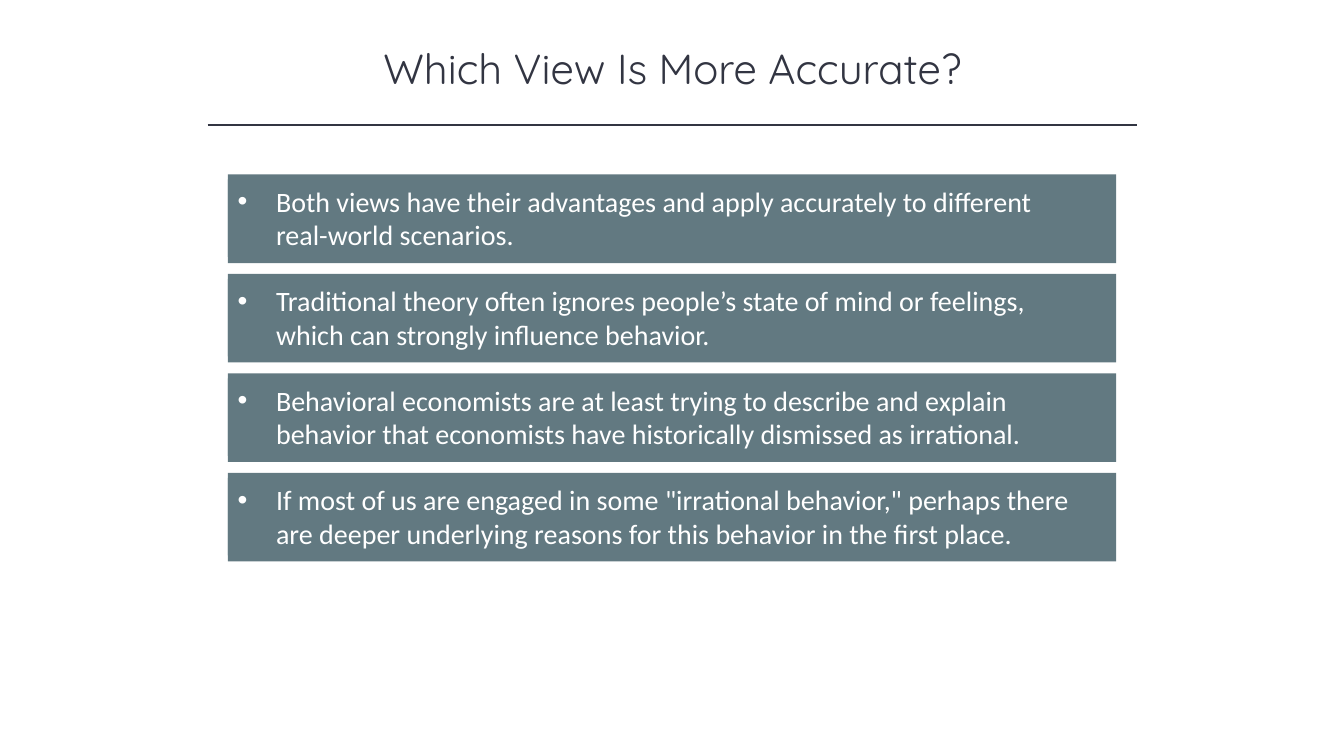
import dataclasses

import lxml.etree
import pptx
import pptx.dml.color
import pptx.enum.shapes
import pptx.enum.text
import pptx.oxml.ns
import pptx.util
from pptx.util import Inches

COLOURS = {"ink": "323542", "bar": "627981", "bar_text": "FFFFFF"}
FIRST_TOP, LAST_TOP = 1.73, 4.69
BAR_LEFT = 2.26


@dataclasses.dataclass(frozen=True)
class Bar:
    """One statement and its distance from the top of the page."""
    text: str
    top: float


STATEMENTS = (
    "Both views have their advantages and apply accurately to different real-world scenarios.",
    "Traditional theory often ignores people’s state of mind or feelings, "
    "which can strongly influence behavior.",
    "Behavioral economists are at least trying to describe and explain behavior "
    "that economists have historically dismissed as irrational.",
    "If most of us are engaged in some \"irrational behavior,\" perhaps there are "
    "deeper underlying reasons for this behavior in the first place.",
)
PITCH = (LAST_TOP - FIRST_TOP) / (len(STATEMENTS) - 1)
BARS = [Bar(text, FIRST_TOP + PITCH * row) for row, text in enumerate(STATEMENTS)]


def colour(name: str) -> pptx.dml.color.RGBColor:
    """Return a named colour."""
    return pptx.dml.color.RGBColor.from_string(COLOURS[name])


def add_span(para, text: str, font: str, size: int, ink: str) -> None:
    """Add one formatted run to a paragraph."""
    span = para.add_run()
    span.text = text
    span.font.name = font
    span.font.size = pptx.util.Pt(size)
    span.font.color.rgb = colour(ink)


def add_bullet(para) -> None:
    """Give a paragraph a round bullet with a hanging indent."""
    properties = para._p.get_or_add_pPr()
    properties.set("marL", str(Inches(0.38)))
    properties.set("indent", str(Inches(-0.38)))
    font = lxml.etree.SubElement(properties, pptx.oxml.ns.qn("a:buFont"))
    font.set("typeface", "Arial")
    bullet = lxml.etree.SubElement(properties, pptx.oxml.ns.qn("a:buChar"))
    bullet.set("char", "•")


def add_panel(group, top: float, width: float, height: float):
    """Add a plain filled rectangle to a group."""
    panel = group.shapes.add_shape(
        pptx.enum.shapes.MSO_SHAPE.RECTANGLE,
        Inches(BAR_LEFT), Inches(top), Inches(width), Inches(height))
    panel.shadow.inherit = False
    panel.fill.solid()
    panel.fill.fore_color.rgb = colour("bar")
    panel.line.fill.background()
    return panel


def add_bar(page, bar: Bar) -> None:
    """Add a bar with its bulleted statement."""
    group = page.shapes.add_group_shape()
    add_panel(group, bar.top, 8.81, 0.88)
    box = add_panel(group, bar.top + 0.05, 8.54, 0.77)
    frame = box.text_frame
    frame.word_wrap = True
    frame.auto_size = pptx.enum.text.MSO_AUTO_SIZE.SHAPE_TO_FIT_TEXT
    frame.vertical_anchor = pptx.enum.text.MSO_ANCHOR.TOP
    para = frame.paragraphs[0]
    para.alignment = pptx.enum.text.PP_ALIGN.LEFT
    add_bullet(para)
    add_span(para, bar.text, "Calibri", 20, "bar_text")


def add_title(page, text: str) -> None:
    """Place and format the title."""
    title = page.shapes.title
    title.left, title.top = Inches(1.67), Inches(0.37)
    title.width, title.height = Inches(10), Inches(0.61)
    frame = title.text_frame
    frame.word_wrap = True
    frame.auto_size = pptx.enum.text.MSO_AUTO_SIZE.SHAPE_TO_FIT_TEXT
    frame.vertical_anchor = pptx.enum.text.MSO_ANCHOR.TOP
    para = frame.paragraphs[0]
    para.alignment = pptx.enum.text.PP_ALIGN.CENTER
    add_span(para, text, "Quicksand", 30, "ink")


def add_rule(page) -> None:
    """Add the line under the title."""
    rule = page.shapes.add_connector(
        pptx.enum.shapes.MSO_CONNECTOR.STRAIGHT,
        Inches(2.06), Inches(1.24), Inches(11.28), Inches(1.24))
    rule.line.color.rgb = colour("ink")
    rule.line.width = pptx.util.Pt(1)
    lxml.etree.SubElement(rule._element.spPr, pptx.oxml.ns.qn("a:effectLst"))


def main() -> None:
    """Build and save the slide."""
    deck = pptx.Presentation()
    deck.slide_width, deck.slide_height = Inches(13.33), Inches(7.5)
    page = deck.slides.add_slide(deck.slide_layouts.get_by_name("Title Only"))
    add_title(page, "Which View Is More Accurate?")
    add_rule(page)
    for bar in BARS:
        add_bar(page, bar)
    deck.save("out.pptx")


if __name__ == "__main__":
    main()
